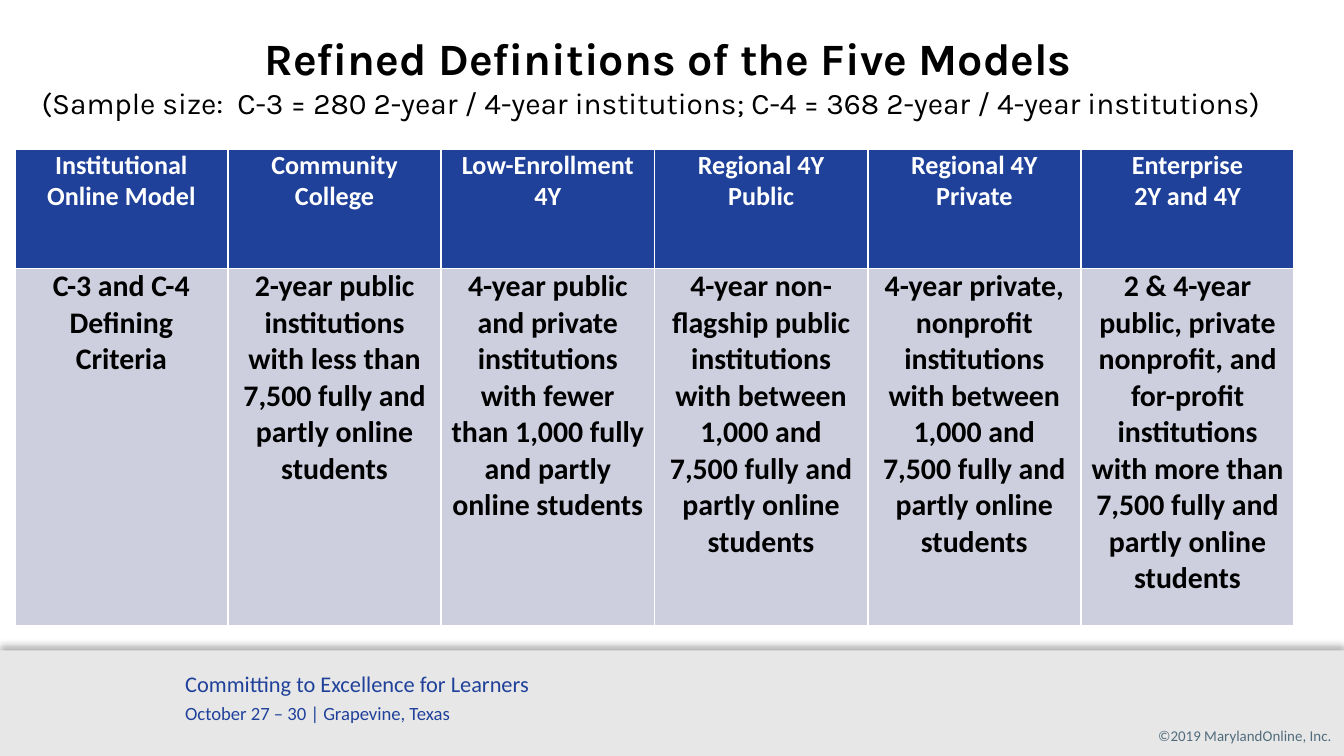
from lxml import etree
from pptx import Presentation
from pptx.dml.color import RGBColor
from pptx.enum.shapes import MSO_SHAPE
from pptx.enum.text import MSO_ANCHOR, MSO_AUTO_SIZE, PP_ALIGN
from pptx.oxml.ns import qn
from pptx.util import Inches, Pt

COLORS = {
    "blue": "1F419A", "lavender": "CDCFDE", "band": "E7E7E7",
    "slate": "526C7C", "black": "000000", "white": "FFFFFF",
}
# Widescreen page, 16:9
WIDTH = 10
HEIGHT = WIDTH * 9 / 16

MODELS = [
    (["Institutional", "Online Model"], ["C-3 and C-4", "Defining Criteria"]),
    (["Community College"],
     ["2-year public institutions with less than 7,500 fully and partly online students"]),
    (["Low-Enrollment 4Y"],
     ["4-year public and private institutions with fewer than 1,000 fully "
      "and partly online students"]),
    (["Regional 4Y Public"],
     ["4-year non-flagship public institutions with between 1,000 and 7,500 "
      "fully and partly online students"]),
    (["Regional 4Y Private"],
     ["4-year private, nonprofit institutions with between 1,000 and 7,500 "
      "fully and partly online students"]),
    (["Enterprise", "2Y and 4Y"],
     ["2 & 4-year public, private nonprofit, and for-profit institutions "
      "with more than 7,500 fully and partly online students"]),
]


def rgb(name):
    return RGBColor.from_string(COLORS[name])


def inches(box):
    return [Inches(length) for length in box]


def add_line(paragraph, line, size, color, font="Calibri", bold=False, align=PP_ALIGN.LEFT):
    paragraph.alignment = align
    run = paragraph.add_run()
    run.text = line
    run.font.size, run.font.bold, run.font.name = Pt(size), bold, font
    run.font.color.rgb = rgb(color)


def add_label(slide, box):
    frame = slide.shapes.add_textbox(*inches(box)).text_frame
    frame.word_wrap = True
    return frame


def add_upward_shadow(shape):
    effects = etree.SubElement(shape._element.spPr, qn("a:effectLst"))
    shadow = etree.SubElement(effects, qn("a:outerShdw"), blurRad=str(Pt(4)),
                              dist=str(Pt(3)), dir=str(270 * 60000), rotWithShape="0")
    shade = etree.SubElement(shadow, qn("a:srgbClr"), val=COLORS["black"])
    etree.SubElement(shade, qn("a:alpha"), val="30000")


def set_borders(cell, color, points):
    properties = cell._tc.get_or_add_tcPr()
    for position, side in enumerate(("lnL", "lnR", "lnT", "lnB")):
        line = etree.Element(qn(f"a:{side}"), w=str(Pt(points)))
        fill = etree.SubElement(line, qn("a:solidFill"))
        etree.SubElement(fill, qn("a:srgbClr"), val=COLORS[color])
        properties.insert(position, line)


def add_footer(slide, box):
    left, top, width, height = box
    # Grey band
    band = slide.shapes.add_shape(MSO_SHAPE.RECTANGLE, *inches(box))
    band.fill.solid()
    band.fill.fore_color.rgb = rgb("band")
    band.line.fill.background()
    add_upward_shadow(band)

    # Copyright, in the bottom right corner
    notice = add_label(slide, (left + 0.832 * width, top + 0.66 * height, 0.159 * width, 0.24))
    notice.margin_right = 0
    notice.word_wrap = False
    add_line(notice.paragraphs[0], "©2019 MarylandOnline, Inc.", 8, "slate",
             align=PP_ALIGN.RIGHT)

    # Conference theme, date and place
    event = add_label(slide, (left + 0.128 * width, top + 0.12 * height, 0.294 * width, 0.51))
    add_line(event.paragraphs[0], "Committing to Excellence for Learners", 12, "blue")
    date = event.add_paragraph()
    date.space_before = Pt(3)
    add_line(date, "October 27 – 30 | Grapevine, Texas", 10, "blue")


def add_heading(slide, box):
    title = slide.shapes.title
    title.left, title.top, title.width, title.height = inches(box)
    frame = title.text_frame
    frame.auto_size = MSO_AUTO_SIZE.NONE
    frame.vertical_anchor = MSO_ANCHOR.TOP
    frame.word_wrap = True
    add_line(frame.paragraphs[0], "Refined Definitions of the Five Models", 24, "black",
             "Karla", bold=True, align=PP_ALIGN.CENTER)
    add_line(frame.add_paragraph(),
             "(Sample size:  C-3 = 280 2-year / 4-year institutions; "
             "C-4 = 368 2-year / 4-year institutions)", 16, "black", "Karla")


def add_models_table(slide, box):
    height = box[3]
    table = slide.shapes.add_table(2, len(MODELS), *inches(box)).table
    rows = [(0.25, 14, "white", "blue"), (0.75, 16, "black", "lavender")]
    for row, (share, size, ink, fill) in enumerate(rows):
        table.rows[row].height = Inches(share * height)
        for column, model in enumerate(MODELS):
            cell = table.cell(row, column)
            cell.margin_left = cell.margin_right = Inches(0.07)
            cell.margin_top = cell.margin_bottom = 0
            cell.fill.solid()
            cell.fill.fore_color.rgb = rgb(fill)
            set_borders(cell, "white", 1)
            frame = cell.text_frame
            for index, line in enumerate(model[row]):
                paragraph = frame.add_paragraph() if index else frame.paragraphs[0]
                add_line(paragraph, line, size, ink, bold=True, align=PP_ALIGN.CENTER)


def main():
    deck = Presentation()
    deck.slide_width, deck.slide_height = Inches(WIDTH), Inches(HEIGHT)
    slide = deck.slides.add_slide(deck.slide_layouts[5])
    footer_top = 4.84
    add_footer(slide, (0, footer_top, WIDTH, HEIGHT - footer_top))
    add_heading(slide, (0.21, 0.18, 9.52, 0.77))
    add_models_table(slide, (0.11, 1.11, 9.52, 3.55))
    deck.save("out.pptx")


if __name__ == "__main__":
    main()
